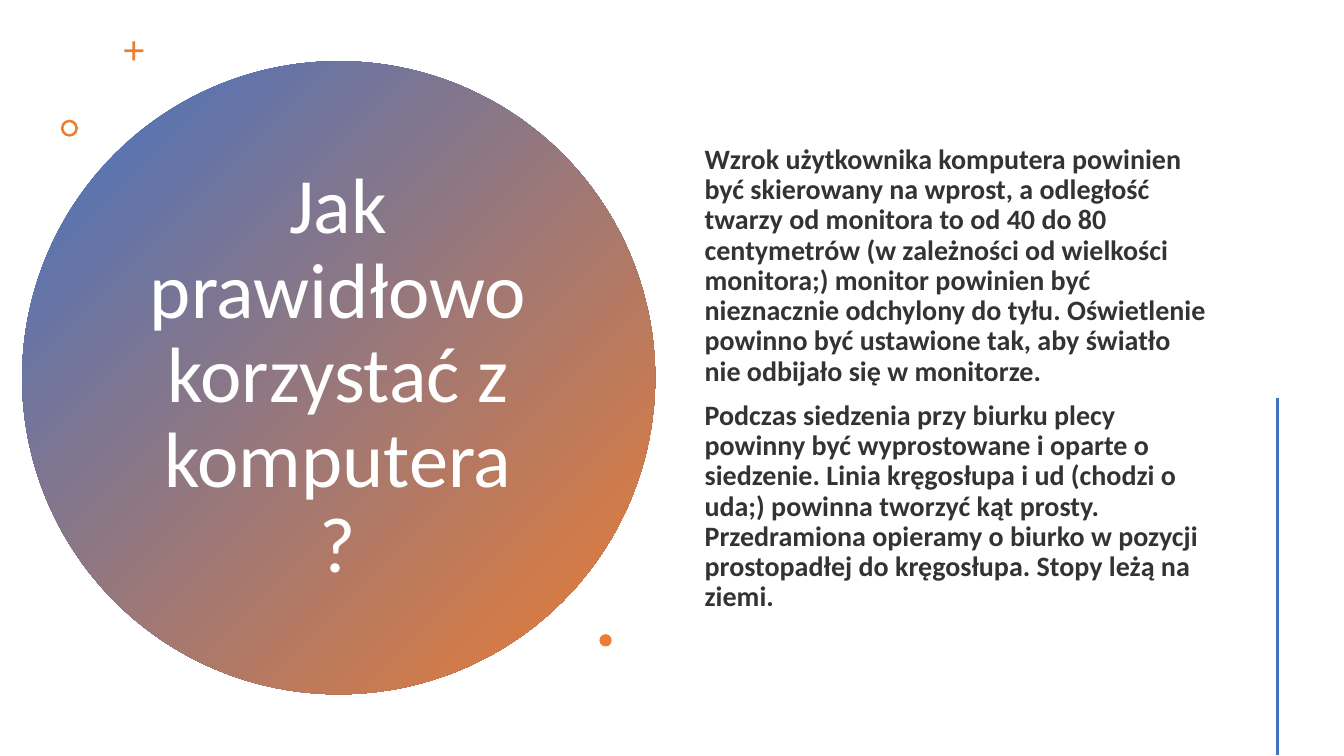
from dataclasses import dataclass

from lxml.etree import SubElement
from pptx import Presentation
from pptx.dml.color import RGBColor
from pptx.enum.shapes import MSO_CONNECTOR, MSO_SHAPE
from pptx.enum.text import MSO_ANCHOR, MSO_AUTO_SIZE, PP_ALIGN
from pptx.oxml.ns import qn
from pptx.shapes.autoshape import Shape
from pptx.slide import Slide
from pptx.util import Pt

BLUE = RGBColor(0x44, 0x72, 0xC4)
ORANGE = RGBColor(0xED, 0x7D, 0x31)
WHITE = RGBColor(0xFF, 0xFF, 0xFF)
DARK_GREY = RGBColor(0x33, 0x33, 0x33)
FONT = "Calibri"

TITLE = "Jak prawidłowo korzystać z komputera?"
ADVICE = [
    "Wzrok użytkownika komputera powinien być skierowany na wprost, a odległość "
    "twarzy od monitora to od 40 do 80 centymetrów (w zależności od wielkości "
    "monitora;) monitor powinien być nieznacznie odchylony do tyłu. Oświetlenie "
    "powinno być ustawione tak, aby światło nie odbijało się w monitorze.",
    "Podczas siedzenia przy biurku plecy powinny być wyprostowane i oparte o "
    "siedzenie. Linia kręgosłupa i ud (chodzi o uda;) powinna tworzyć kąt prosty. "
    "Przedramiona opieramy o biurko w pozycji prostopadłej do kręgosłupa. "
    "Stopy leżą na ziemi.",
]


@dataclass(frozen=True)
class Ornament:
    kind: MSO_SHAPE
    left: float
    top: float
    size: float
    adjustment: float | None = None


@dataclass(frozen=True)
class TextStyle:
    size: float
    color: RGBColor
    bold: bool
    align: PP_ALIGN
    space_before: float


ORNAMENTS = [
    Ornament(MSO_SHAPE.CROSS, 88.8, 29.5, 13.6, 0.43),
    Ornament(MSO_SHAPE.DONUT, 43.5, 85.5, 12.2, 0.15),
    Ornament(MSO_SHAPE.OVAL, 428.2, 453, 8.8),
]
TITLE_STYLE = TextStyle(56, WHITE, False, PP_ALIGN.CENTER, 0)
ADVICE_STYLE = TextStyle(20, DARK_GREY, True, PP_ALIGN.LEFT, 10)


def add_ornament(page: Slide, ornament: Ornament) -> Shape:
    size = Pt(ornament.size)
    shape = page.shapes.add_shape(
        ornament.kind, Pt(ornament.left), Pt(ornament.top), size, size)
    shape.shadow.inherit = False
    shape.line.fill.background()
    shape.fill.solid()
    shape.fill.fore_color.rgb = ORANGE
    if ornament.adjustment is not None:
        shape.adjustments[0] = ornament.adjustment
    return shape


def place(box: Shape, left: float, top: float, width: float, height: float) -> None:
    box.left, box.top, box.width, box.height = Pt(left), Pt(top), Pt(width), Pt(height)


def write_text(box: Shape, text: str, style: TextStyle) -> None:
    frame = box.text_frame
    frame.text = text
    frame.word_wrap = True
    frame.auto_size = MSO_AUTO_SIZE.NONE
    frame.vertical_anchor = MSO_ANCHOR.MIDDLE
    for para in frame.paragraphs:
        para.alignment = style.align
        para.line_spacing = 0.9
        para.space_before = Pt(style.space_before)
        for span in para.runs:
            span.font.name = FONT
            span.font.size = Pt(style.size)
            span.font.bold = style.bold
            span.font.color.rgb = style.color


def remove_bullets(box: Shape) -> None:
    for para in box.text_frame.paragraphs:
        properties = para._p.get_or_add_pPr()
        properties.set("marL", "0")
        properties.set("indent", "0")
        SubElement(properties, qn("a:buNone"))


def main() -> None:
    deck = Presentation()
    deck.slide_width, deck.slide_height = Pt(960), Pt(540)
    page = deck.slides.add_slide(deck.slide_layouts[1])
    title, body = page.shapes.title, page.placeholders[1]

    # Gradient circle behind the title
    circle = add_ornament(page, Ornament(MSO_SHAPE.OVAL, 15.8, 43.7, 452.2))
    circle.fill.gradient()
    circle.fill.gradient_angle = 315
    for stop, color in zip(circle.fill.gradient_stops, (BLUE, ORANGE)):
        stop.color.rgb = color
    title.element.addprevious(circle.element)

    # Title and advice
    place(title, 97.9, 101.5, 287.3, 336.2)
    write_text(title, TITLE, TITLE_STYLE)
    place(body, 496.1, 41, 375.8, 459.4)
    write_text(body, "\n".join(ADVICE), ADVICE_STYLE)
    remove_bullets(body)

    # Small ornaments around the circle
    for ornament in ORNAMENTS:
        add_ornament(page, ornament)

    # Vertical line at the right edge
    edge = page.shapes.add_connector(
        MSO_CONNECTOR.STRAIGHT, Pt(912.4), Pt(284), Pt(912.4), Pt(539.5))
    edge.line.color.rgb = BLUE
    edge.line.width = Pt(2)
    SubElement(edge.element.spPr, qn("a:effectLst"))

    deck.save("out.pptx")


if __name__ == "__main__":
    main()
